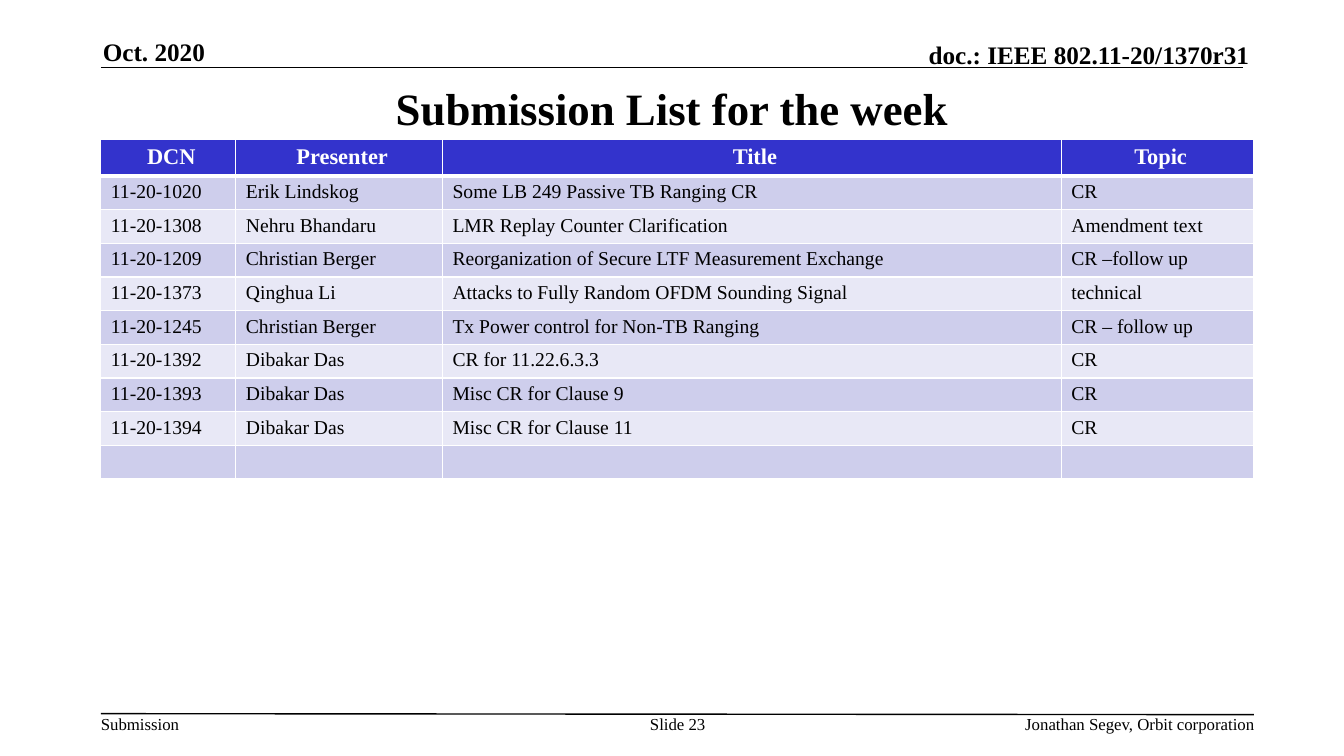
from lxml import etree
from pptx import Presentation
from pptx import util as u
from pptx.dml.color import RGBColor
from pptx.enum import shapes, text
from pptx.oxml.ns import qn

LEFT, CENTER, RIGHT = text.PP_ALIGN.LEFT, text.PP_ALIGN.CENTER, text.PP_ALIGN.RIGHT
TOP, MIDDLE, BOTTOM = (text.MSO_ANCHOR.TOP, text.MSO_ANCHOR.MIDDLE,
                       text.MSO_ANCHOR.BOTTOM)


def rgb(value):
    return RGBColor.from_string(value)


class Page:
    """Style and current slide; lengths are columns and rows of a 40 x 30 grid."""
    FONT, INK, PAPER = "Times New Roman", "000000", "FFFFFF"
    HEAD, BANDS = "3333CC", ("CECEEC", "E8E8F6")

    def __init__(self, prs):
        self.s = prs.slides.add_slide(prs.slide_layouts[6])
        self.col, self.row = prs.slide_width / 40, prs.slide_height / 30

    def x(self, cols):
        return u.Emu(round(cols * self.col))

    def y(self, rows):
        return u.Emu(round(rows * self.row))

    def style(self, p, size, bold, color, align):
        p.alignment = align
        for r in p.runs:
            r.font.name, r.font.size, r.font.bold = self.FONT, u.Pt(size), bold
            r.font.color.rgb = rgb(color)

    def label(self, words, x, y, w, h, size, bold=False, align=LEFT, anchor=TOP):
        sp = self.s.shapes.add_textbox(self.x(x), self.y(y), self.x(w), self.y(h))
        tf = sp.text_frame
        tf.word_wrap, tf.vertical_anchor = True, anchor
        tf.margin_left = tf.margin_right = tf.margin_top = tf.margin_bottom = 0
        tf.text = words
        self.style(tf.paragraphs[0], size, bold, self.INK, align)

    def rule(self, x1, y1, x2, y2):
        line = self.s.shapes.add_connector(
            shapes.MSO_CONNECTOR.STRAIGHT,
            self.x(x1), self.y(y1), self.x(x2), self.y(y2))
        line.line.color.rgb, line.line.width = rgb(self.INK), u.Pt(1)
        etree.SubElement(line._element.spPr, qn("a:effectLst"))

    def borders(self, cell, top, bottom):
        sides = (("a:lnL", 1), ("a:lnR", 1), ("a:lnT", top), ("a:lnB", bottom))
        for i, (side, width) in enumerate(sides):
            ln = etree.Element(qn(side), w=str(u.Pt(width)))
            fill = etree.SubElement(ln, qn("a:solidFill"))
            etree.SubElement(fill, qn("a:srgbClr"), val=self.PAPER)
            cell._tc.get_or_add_tcPr().insert(i, ln)

    def cell(self, cell, words, i):
        head = i == 0
        cell.fill.solid()
        cell.fill.fore_color.rgb = rgb(self.HEAD if head else self.BANDS[(i - 1) % 2])
        self.borders(cell, top=3 if i == 1 else 1, bottom=3 if head else 1)
        cell.margin_right = u.Inches(0.04 if head else 0.1)
        p = cell.text_frame.paragraphs[0]
        if words:
            p.text = words
            self.style(p, 16 if head else 14, head,
                       self.PAPER if head else self.INK, CENTER if head else LEFT)
        else:  # keeps an empty row as low as the others
            p._p.get_or_add_endParaRPr().set("sz", "1400")

    def table(self, rows, x, y, widths, head_height, row_height):
        heights = [head_height] + [row_height] * (len(rows) - 1)
        tbl = self.s.shapes.add_table(
            len(rows), len(widths), self.x(x), self.y(y),
            self.x(sum(widths)), self.y(sum(heights))).table
        for column, width in zip(tbl.columns, widths):
            column.width = self.x(width)
        for i, (row, height) in enumerate(zip(rows, heights)):
            tbl.rows[i].height = self.y(height)
            for j, words in enumerate(row):
                self.cell(tbl.cell(i, j), words, i)


SUBMISSIONS = [
    ("DCN", "Presenter", "Title", "Topic"),
    ("11-20-1020", "Erik Lindskog", "Some LB 249 Passive TB Ranging CR", "CR"),
    ("11-20-1308", "Nehru Bhandaru", "LMR Replay Counter Clarification",
     "Amendment text"),
    ("11-20-1209", "Christian Berger",
     "Reorganization of Secure LTF Measurement Exchange", "CR –follow up"),
    ("11-20-1373", "Qinghua Li", "Attacks to Fully Random OFDM Sounding Signal",
     "technical"),
    ("11-20-1245", "Christian Berger", "Tx Power control for Non-TB Ranging",
     "CR – follow up"),
    ("11-20-1392", "Dibakar Das", "CR for 11.22.6.3.3", "CR"),
    ("11-20-1393", "Dibakar Das", "Misc CR for Clause 9", "CR"),
    ("11-20-1394", "Dibakar Das", "Misc CR for Clause 11", "CR"),
    ("", "", "", ""),
]


def main():
    prs = Presentation()
    prs.slide_width, prs.slide_height = u.Inches(13.33), u.Inches(7.5)
    page = Page(prs)

    # Header
    page.rule(3, 2.68, 37, 2.68)
    page.label("Oct. 2020", 3.06, 1.44, 8.2, 1.2, 18, True, LEFT, BOTTOM)
    page.label("doc.: IEEE 802.11-20/1370r31", 21.88, 1.56, 15.3, 1.2, 18, True,
               RIGHT, BOTTOM)

    # Title and submission table
    page.label("Submission List for the week", 3, 3, 34, 2.56, 32, True,
               CENTER, MIDDLE)
    page.table(SUBMISSIONS, 3, 5.52, (4.02, 6.15, 18.42, 5.73), 1.38, 1.26)

    # Footer
    page.rule(3, 28.32, 37.32, 28.36)
    page.label("Submission", 3, 28.32, 3, 0.8, 12)
    page.label("Slide 23", 19.02, 28.32, 2.3, 1.6, 12, align=CENTER)
    page.label("Jonathan Segev, Orbit corporation", 23.42, 28.32, 13.92, 0.8, 12,
               align=RIGHT)

    prs.save("out.pptx")


if __name__ == "__main__":
    main()
